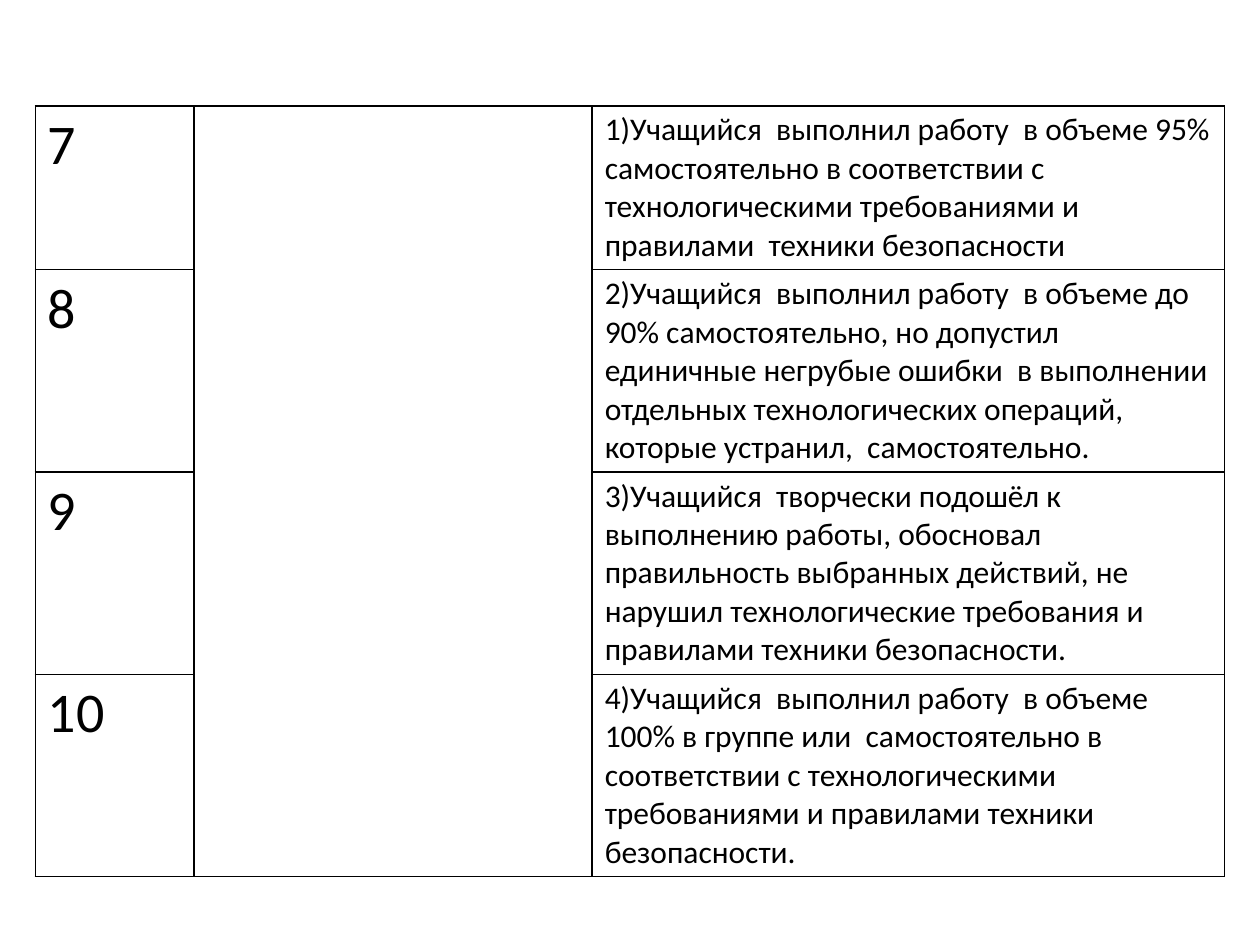
import pptx
import pptx.dml.color
import pptx.oxml.ns
import pptx.util
from lxml import etree

BLACK = pptx.dml.color.RGBColor(0, 0, 0)
WHITE = pptx.dml.color.RGBColor(255, 255, 255)
FONT = "Calibri"
GRADE_SIZE, CRITERION_SIZE = 32, 18
COLUMN_WIDTHS = [1.26, 3.16, 5.02]
ROW_HEIGHTS = [1.3, 1.6, 1.6, 1.6]

criteria = [
    ("7", "1)Учащийся  выполнил работу  в объеме 95% самостоятельно в соответствии с "
          "технологическими требованиями и правилами  техники безопасности"),
    ("8", "2)Учащийся  выполнил работу  в объеме до 90% самостоятельно, но допустил "
          "единичные негрубые ошибки  в выполнении отдельных технологических операций, "
          "которые устранил,  самостоятельно."),
    ("9", "3)Учащийся  творчески подошёл к выполнению работы, обосновал правильность "
          "выбранных действий, не  нарушил технологические требования и правилами "
          "техники безопасности."),
    ("10", "4)Учащийся  выполнил работу  в объеме 100% в группе или  самостоятельно в "
           "соответствии с технологическими требованиями и правилами техники безопасности."),
]


def add_borders(cell):
    properties = cell._tc.get_or_add_tcPr()
    for side in ("lnL", "lnR", "lnT", "lnB"):
        line = etree.SubElement(properties, pptx.oxml.ns.qn(f"a:{side}"),
                                w=str(pptx.util.Pt(1)))
        fill = etree.SubElement(line, pptx.oxml.ns.qn("a:solidFill"))
        etree.SubElement(fill, pptx.oxml.ns.qn("a:srgbClr"), val=str(BLACK))


def write(cell, text, size):
    cell.text_frame.text = text
    font = cell.text_frame.paragraphs[0].runs[0].font
    font.name, font.size, font.color.rgb = FONT, pptx.util.Pt(size), BLACK


deck = pptx.Presentation()
deck.slide_width, deck.slide_height = pptx.util.Inches(10), pptx.util.Inches(7.5)
slide = deck.slides.add_slide(deck.slide_layouts[6])

grading = slide.shapes.add_table(
    len(ROW_HEIGHTS), len(COLUMN_WIDTHS),
    pptx.util.Inches(0.28), pptx.util.Inches(0.84),
    pptx.util.Inches(sum(COLUMN_WIDTHS)), pptx.util.Inches(sum(ROW_HEIGHTS))).table
grading.first_row = grading.horz_banding = False
for column, width in zip(grading.columns, COLUMN_WIDTHS):
    column.width = pptx.util.Inches(width)
for row, height in zip(grading.rows, ROW_HEIGHTS):
    row.height = pptx.util.Inches(height)

for cell in grading.iter_cells():
    add_borders(cell)
    cell.fill.solid()
    cell.fill.fore_color.rgb = WHITE
    cell.margin_top = cell.margin_bottom = pptx.util.Inches(0.04)

grading.cell(0, 1).merge(grading.cell(len(criteria) - 1, 1))
for index, (grade, criterion) in enumerate(criteria):
    write(grading.cell(index, 0), grade, GRADE_SIZE)
    write(grading.cell(index, 2), criterion, CRITERION_SIZE)

deck.save("out.pptx")
